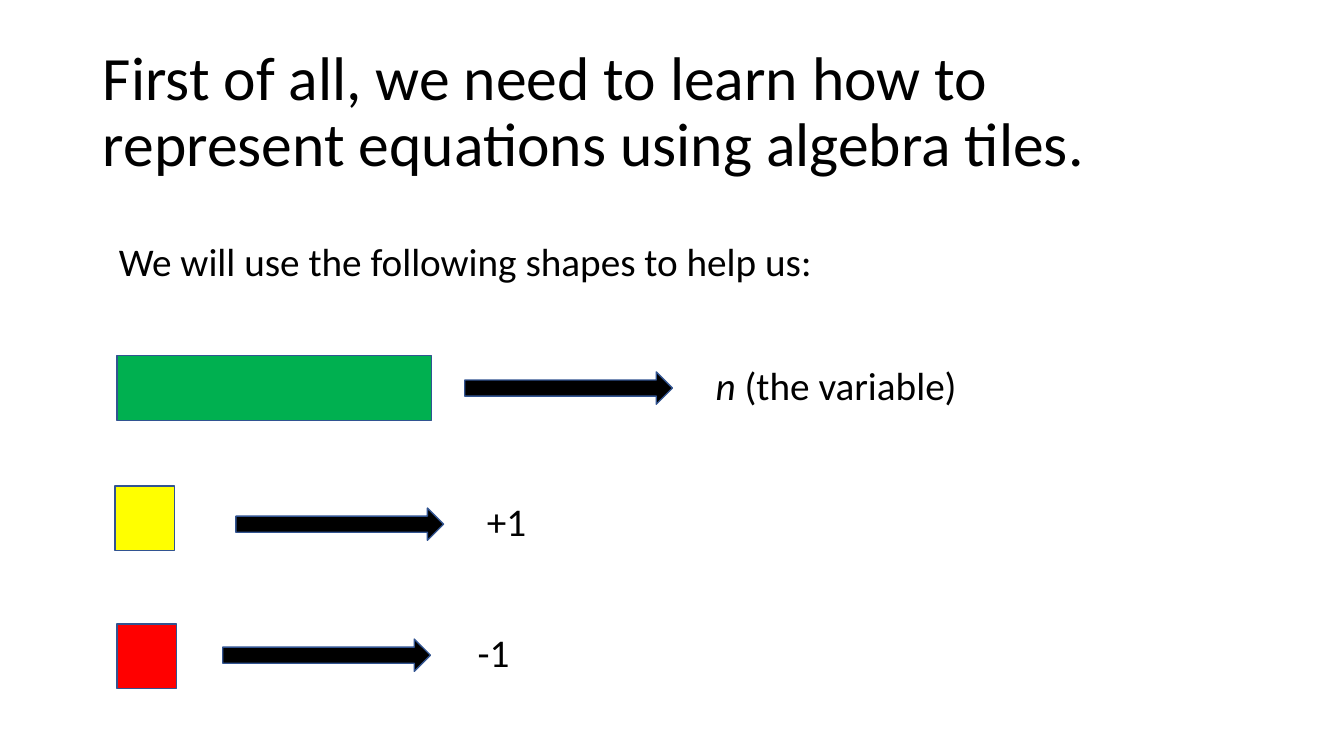
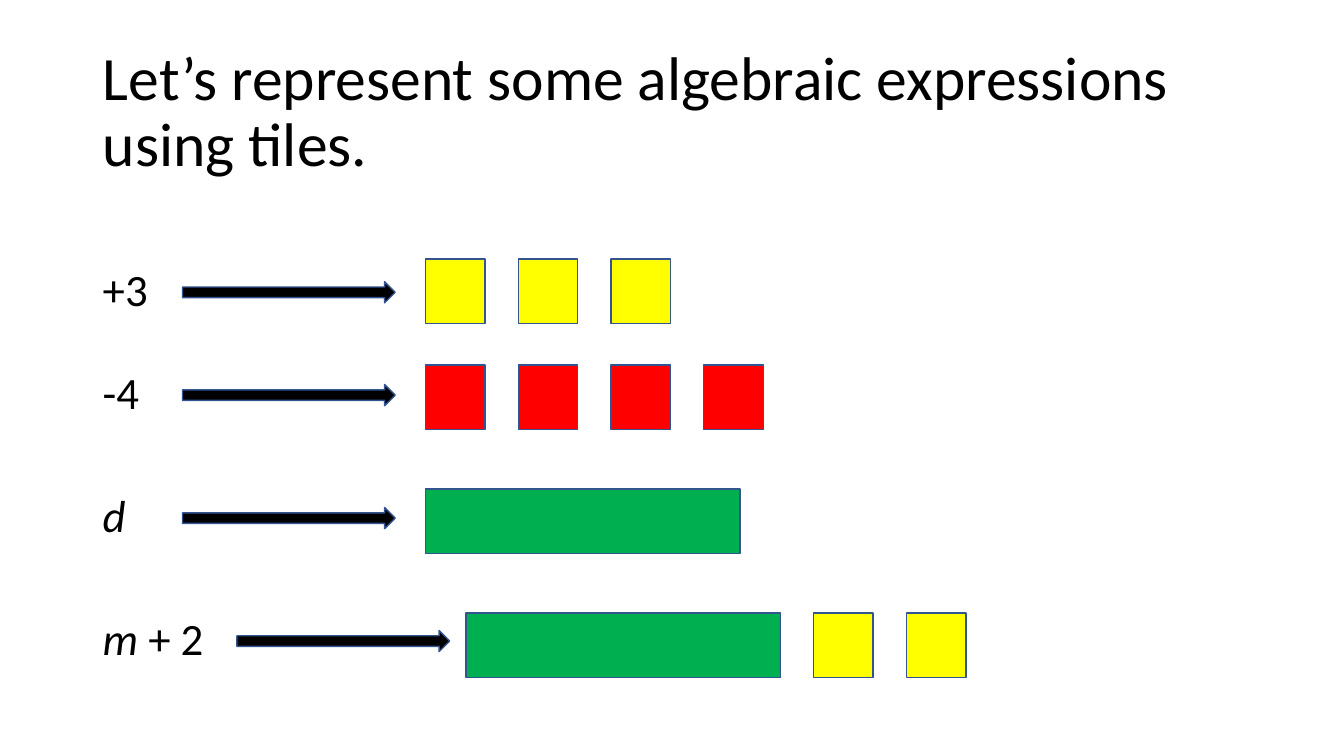
from dataclasses import dataclass
from pptx import Presentation
from pptx.dml.color import RGBColor as RGB
from pptx.enum.shapes import MSO_SHAPE as Shape
from pptx.enum.text import MSO_ANCHOR as Anchor, PP_ALIGN as Align
from pptx.util import Inches, Pt


@dataclass(frozen=True)
class Theme:
    font: str = "Calibri"
    ink: str = "000000"
    edge: str = "325491"
    green: str = "00B050"
    yellow: str = "FFFF00"
    red: str = "FF0000"
    title: int = 44
    body: int = 28
    label: int = 32


T = Theme()

# Tile kinds: width and colour
TILES = {"var": (3.12, T.green), "plus": (0.59, T.yellow), "minus": (0.59, T.red)}
TALL = 0.64   # tile height
GAP = 0.33    # space between tiles
BOX = 1.45    # text box height

# Texts are (italic part, upright part)
KEY_TITLE = "First of all, we need to learn how to represent equations using algebra tiles."
INTRO = ("", "We will use the following shapes to help us:")
# tile, tile left, tile top, arrow left, middle, label left, label width, label
KEYS = [
    ("var", 1.16, 3.53, 4.61, 3.85, 7.0, 5.0, ("n", " (the variable)")),
    ("plus", 1.14, 4.82, 2.34, 5.2, 4.73, 1.07, ("", "+1")),
    ("minus", 1.16, 6.19, 2.21, 6.5, 4.64, 1.07, ("", "-1")),
]

SUM_TITLE = "Let’s represent some algebraic expressions using tiles."
# label, label width, middle, arrow left, tiles left, tiles top, tiles
SUMS = [
    (("", "+3"), 0.98, 2.9, 1.81, 4.22, 2.57, ["plus"] * 3),
    (("", "-4"), 0.98, 3.92, 1.81, 4.22, 3.62, ["minus"] * 4),
    (("d", ""), 0.98, 5.14, 1.81, 4.22, 4.85, ["var"]),
    (("m", " + 2"), 1.44, 6.36, 2.35, 4.62, 6.08, ["var", "plus", "plus"]),
]


def style(frame, size):
    frame.word_wrap = True
    frame.vertical_anchor = Anchor.MIDDLE
    para = frame.paragraphs[0]
    para.alignment = Align.LEFT
    para.line_spacing = 0.9
    for run in para.runs:
        run.font.name = T.font
        run.font.size = Pt(size)
        run.font.color.rgb = RGB.from_string(T.ink)


def start(deck, text):
    slide = deck.slides.add_slide(deck.slide_layouts[5])
    title = slide.shapes.title
    title.left, title.top = Inches(0.92), Inches(0.4)
    title.width, title.height = Inches(11.5), Inches(BOX)
    title.text_frame.text = text
    style(title.text_frame, T.title)
    return slide


def write(slide, parts, left, mid, width, size):
    box = slide.shapes.add_textbox(
        Inches(left), Inches(mid - BOX / 2), Inches(width), Inches(BOX))
    para = box.text_frame.paragraphs[0]
    for text, slant in zip(parts, (True, False)):
        if text:
            run = para.add_run()
            run.text = text
            run.font.italic = slant
    style(box.text_frame, size)


def draw(slide, form, left, top, width, height, fill):
    shape = slide.shapes.add_shape(
        form, Inches(left), Inches(top), Inches(width), Inches(height))
    shape.shadow.inherit = False
    shape.fill.solid()
    shape.fill.fore_color.rgb = RGB.from_string(fill)
    shape.line.color.rgb = RGB.from_string(T.edge)
    shape.line.width = Pt(1)


def arrow(slide, left, mid, width, height):
    draw(slide, Shape.RIGHT_ARROW, left, mid - height / 2, width, height, T.ink)


def lay(slide, kinds, left, top):
    """Place tiles side by side with equal gaps."""
    for kind in kinds:
        width, fill = TILES[kind]
        draw(slide, Shape.RECTANGLE, left, top, width, TALL, fill)
        left += width + GAP


def main():
    deck = Presentation()
    deck.slide_width, deck.slide_height = Inches(13.33), Inches(7.5)

    # Key to the tiles
    slide = start(deck, KEY_TITLE)
    write(slide, INTRO, 1.08, 2.62, 11.5, T.body)
    for kind, left, top, tail, mid, side, width, label in KEYS:
        lay(slide, [kind], left, top)
        arrow(slide, tail, mid, 2.06, 0.32)
        write(slide, label, side, mid, width, T.body)

    # Expressions built from tiles
    slide = start(deck, SUM_TITLE)
    for label, width, mid, tail, left, top, kinds in SUMS:
        write(slide, label, 0.92, mid, width, T.label)
        arrow(slide, tail, mid, 2.11, 0.21)
        lay(slide, kinds, left, top)

    deck.save("out.pptx")


if __name__ == "__main__":
    main()
